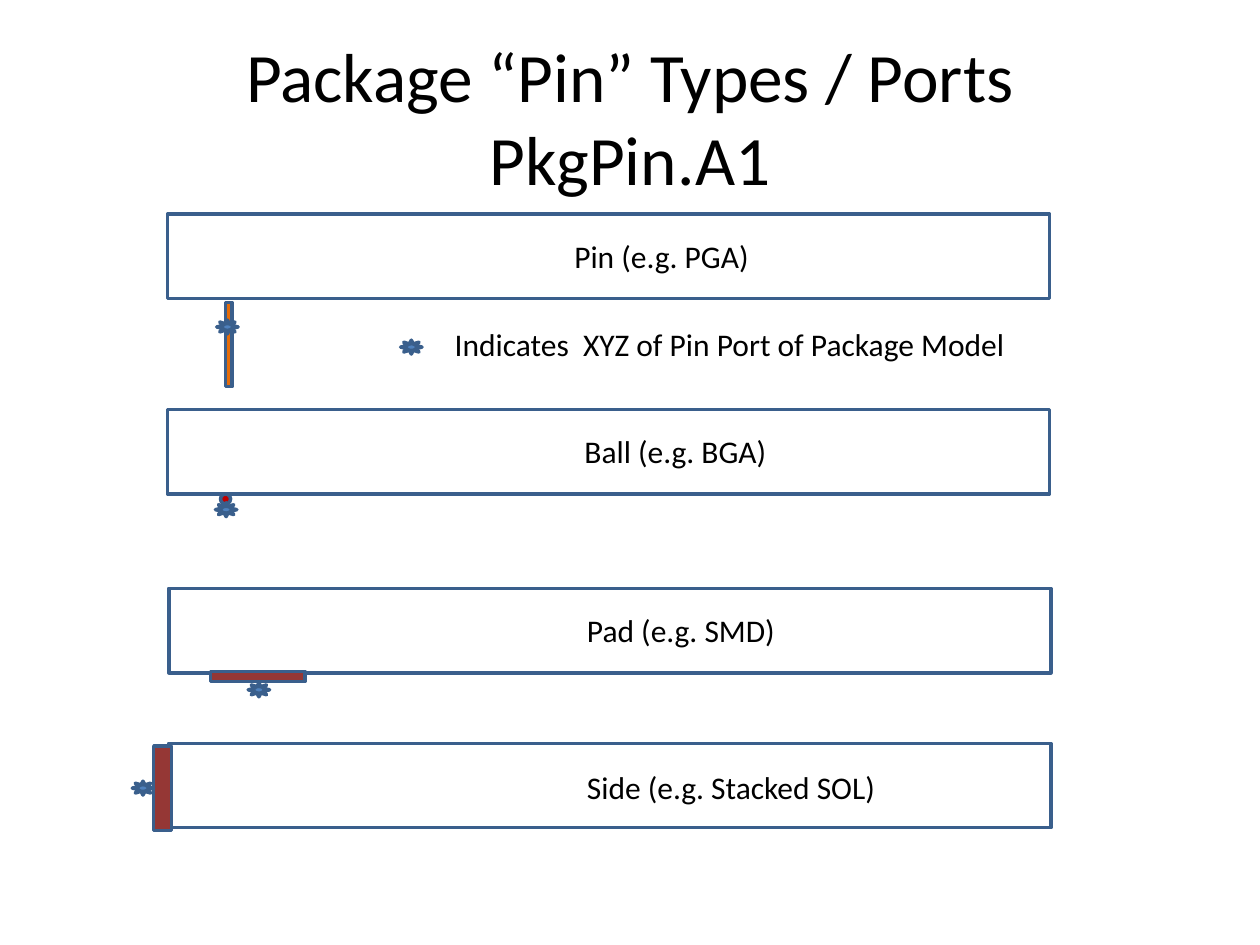
"""Build the slide on package pin types and the ports that mark them."""
from dataclasses import dataclass
from pptx import Presentation
from pptx.dml.color import RGBColor
from pptx.enum.shapes import MSO_SHAPE
from pptx.enum.text import MSO_ANCHOR, MSO_AUTO_SIZE, PP_ALIGN
from pptx.util import Inches, Pt

RECT, BALL, SUN = MSO_SHAPE.RECTANGLE, MSO_SHAPE.OVAL, MSO_SHAPE.SUN
MIDDLE, CENTER = MSO_ANCHOR.MIDDLE, PP_ALIGN.CENTER
FIXED, GROW = MSO_AUTO_SIZE.NONE, MSO_AUTO_SIZE.SHAPE_TO_FIT_TEXT


@dataclass
class Theme:
    font: str = "Calibri"
    head: float = 39.6
    body: float = 18
    edge: float = 2
    ink: str = "000000"
    line: str = "3A5F8C"
    port: str = "4F81BD"
    pin: str = "E46C0A"
    ball: str = "C00000"
    pad: str = "953735"


theme = Theme()
deck = Presentation()
deck.slide_width, deck.slide_height = Inches(10), Inches(7.5)
slide = deck.slides.add_slide(deck.slide_layouts[5])


def draw(kind, box, fill=None):
    shape = slide.shapes.add_shape(kind, *map(Inches, box))
    shape.shadow.inherit = False
    if fill:
        shape.fill.solid()
        shape.fill.fore_color.rgb = RGBColor.from_string(fill)
    else:
        shape.fill.background()
    shape.line.color.rgb = RGBColor.from_string(theme.line)
    shape.line.width = Pt(theme.edge)


def write(para, text, size):
    run = para.add_run()
    run.text = text
    run.font.name = theme.font
    run.font.size = Pt(size)
    run.font.color.rgb = RGBColor.from_string(theme.ink)


title = slide.shapes.title
title.left, title.top, title.width, title.height = map(Inches, (0.5, 0.3, 9, 1.25))
frame = title.text_frame
frame.word_wrap, frame.auto_size = True, FIXED
frame.vertical_anchor = MIDDLE
para = frame.paragraphs[0]
para.alignment = CENTER
write(para, "Package “Pin” Types / Ports", theme.head)
para.add_line_break()
write(para, "PkgPin.A1", theme.head)

bar_w, bar_h = 7, 0.67
bars = [(1.33, 1.7), (1.33, 3.25), (1.34, 4.67), (1.34, 5.9)]
for left, top in bars:
    draw(RECT, (left, top, bar_w, bar_h))

leads = [
    (RECT, (1.79, 2.4, 0.05, bar_h), theme.pin),
    (BALL, (1.75, 3.92, 0.08, 0.08), theme.ball),
    (RECT, (1.67, 5.33, 0.75, 0.08), theme.pad),
    (RECT, (1.22, 5.92, 0.14, bar_h), theme.pad),
]
for kind, box, fill in leads:
    draw(kind, box, fill)

ports = [(1.72, 2.54), (1.71, 3.99), (1.97, 5.42), (1.05, 6.2), (3.18, 2.7)]
for left, top in ports:
    draw(SUN, (left, top, 0.17, 0.11), theme.port)

labels = [
    ("Pin (e.g. PGA)", 4.46, 1.83, 1.6),
    ("Ball (e.g. BGA)", 4.54, 3.38, 1.65),
    ("Pad (e.g. SMD)", 4.56, 4.8, 1.71),
    ("Side (e.g. Stacked SOL)", 4.56, 6.05, 2.52),
    ("Indicates  XYZ of Pin Port of Package Model", 3.51, 2.53, 4.62),
]
for text, left, top, width in labels:
    label = slide.shapes.add_textbox(*map(Inches, (left, top, width, 0.4)))
    frame = label.text_frame
    frame.word_wrap, frame.auto_size = False, GROW
    write(frame.paragraphs[0], text, theme.body)

deck.save("out.pptx")
